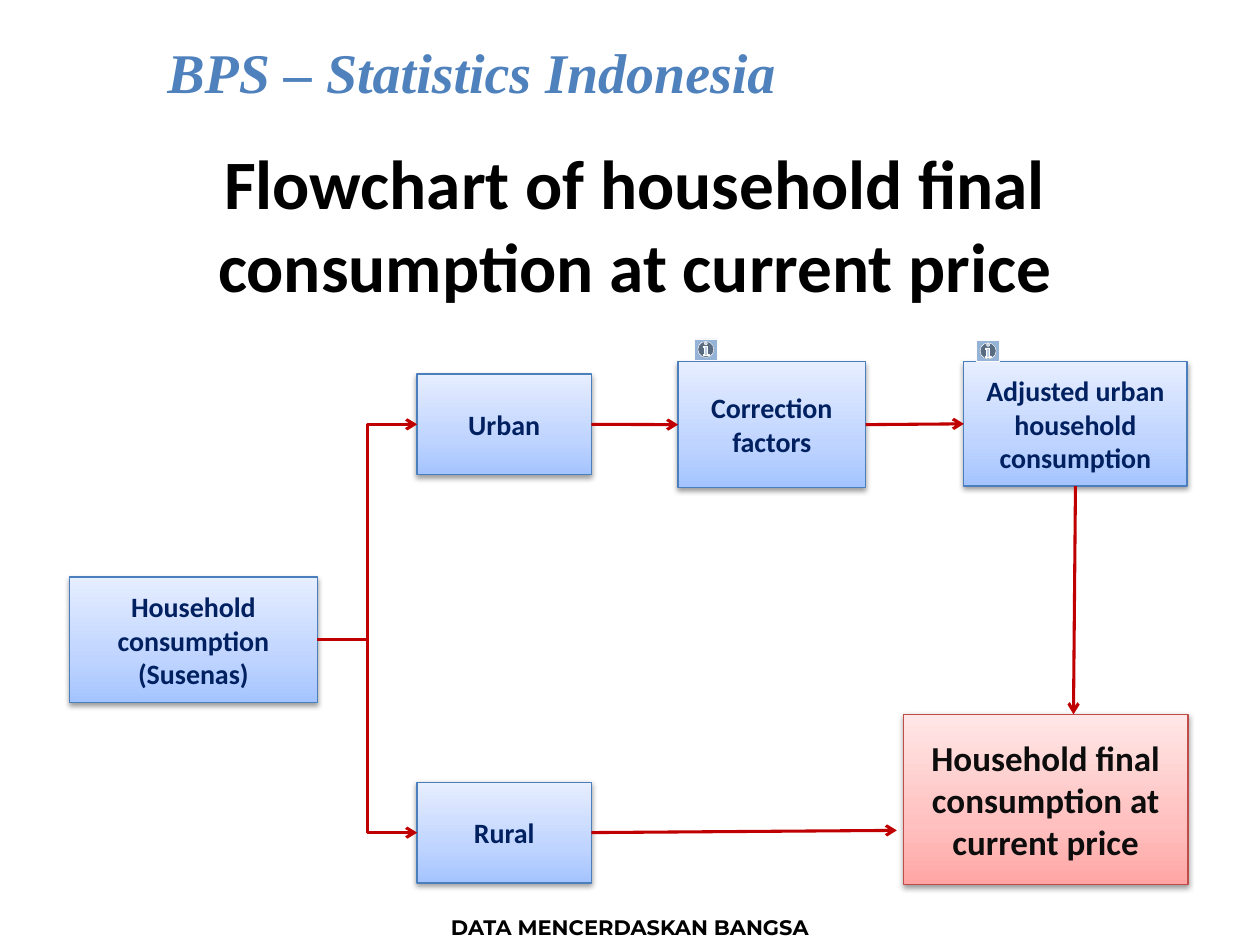
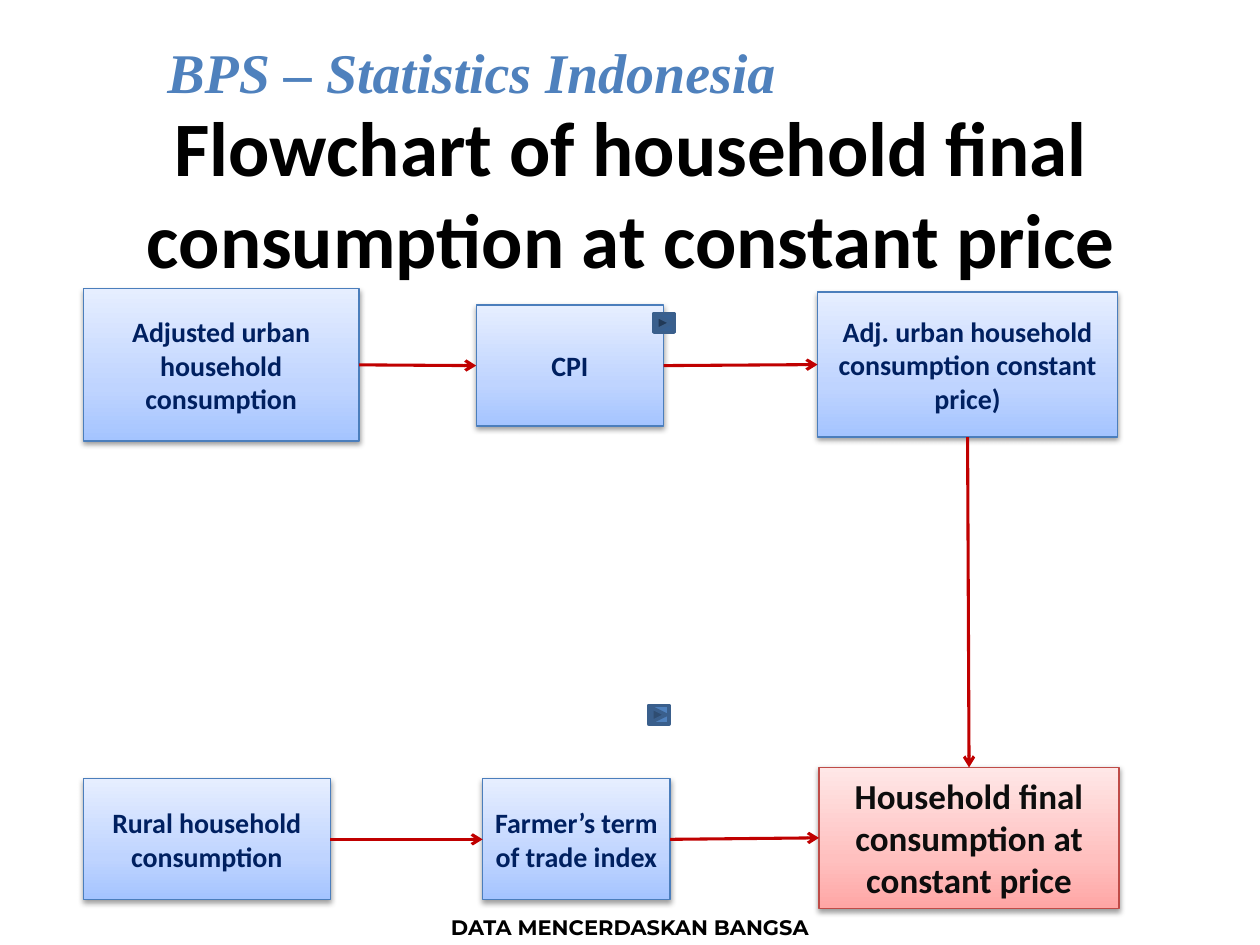
from copy import deepcopy

from lxml import etree
from pptx import Presentation
from pptx.dml.color import RGBColor
from pptx.enum import shapes, text
from pptx.oxml.ns import qn
from pptx.util import Cm, Pt

BLACK = RGBColor(0x00, 0x00, 0x00)
HEADER_BLUE = RGBColor(0x4F, 0x81, 0xBD)
NAVY = RGBColor(0x00, 0x20, 0x60)
NEAR_BLACK = RGBColor(0x0D, 0x0D, 0x0D)
ARROW_RED = RGBColor(0xC0, 0x00, 0x00)
STEP_EDGE = RGBColor(0x4B, 0x7E, 0xBC)
RESULT_EDGE = RGBColor(0xBF, 0x4C, 0x48)
INFO_FILL = RGBColor(0x95, 0xB3, 0xD7)
INFO_EDGE = RGBColor(0xFC, 0xFB, 0xF9)
NEXT_DARK = RGBColor(0x37, 0x60, 0x92)
NEXT_EDGE = RGBColor(0x3A, 0x5F, 0x8C)
STEP_STOPS = (RGBColor(0xA4, 0xC4, 0xFF), RGBColor(0xBF, 0xD4, 0xFF), RGBColor(0xE6, 0xEE, 0xFF))
RESULT_STOPS = (RGBColor(0xFF, 0xA6, 0xA5), RGBColor(0xFF, 0xC0, 0xBF), RGBColor(0xFF, 0xE7, 0xE7))
STOP_POSITIONS = (0, 0.35, 1)

BODY_FONT = "Calibri"
TOP, LEFT, BOTTOM, RIGHT = range(4)


def add_child(parent, tag, **attributes):
    return etree.SubElement(parent, qn(tag), attributes)


def write(frame, words, size, color, font=BODY_FONT, italic=None):
    """Fill a text frame with one centred bold run and return the run."""
    frame.word_wrap = True
    para = frame.paragraphs[0]
    para.alignment = text.PP_ALIGN.CENTER
    span = para.add_run()
    span.text = words
    span.font.name = font
    span.font.size = Pt(size)
    span.font.bold = True
    span.font.italic = italic
    span.font.color.rgb = color
    return span


def add_label(page, place, *style, **options):
    box = page.shapes.add_textbox(*map(Cm, place))
    return write(box.text_frame, *style, **options)


def outline_text(span, color, width):
    properties = span.font._element
    line = etree.Element(qn("a:ln"), w=str(Pt(width)))
    fill = add_child(line, "a:solidFill")
    add_child(fill, "a:srgbClr", val=str(color))
    properties.insert(0, line)


def add_page(deck, title, size, place):
    """Add a slide with the shared header and footer and its own title."""
    page = deck.slides.add_slide(deck.slide_layouts[5])
    footer = add_label(page, (0, 18.31, 25.4, 0.76), "DATA MENCERDASKAN BANGSA",
                       12, BLACK, font="Montserrat")
    outline_text(footer, BLACK, 0.75)
    add_label(page, (2.11, 0.64, 14.81, 1.63), "BPS – Statistics Indonesia",
              32, HEADER_BLUE, font="Times New Roman", italic=True)
    heading = page.shapes.title
    heading.left, heading.top, heading.width, heading.height = map(Cm, place)
    frame = heading.text_frame
    frame.auto_size = text.MSO_AUTO_SIZE.NONE
    frame.vertical_anchor = text.MSO_ANCHOR.MIDDLE
    write(frame, title, size, BLACK)
    return page


def fill_gradient(box, colors):
    """Blend three colours from the bottom edge to the top edge."""
    box.fill.gradient()
    box.fill.gradient_angle = 90
    stop_list = box._element.spPr.find(qn("a:gradFill")).find(qn("a:gsLst"))
    stop_list.append(deepcopy(stop_list[-1]))
    for stop, color, position in zip(box.fill.gradient_stops, colors, STOP_POSITIONS):
        stop.color.rgb = color
        stop.position = position


def add_soft_shadow(box):
    box.shadow.inherit = False
    effects = box._element.spPr.find(qn("a:effectLst"))
    shadow = add_child(effects, "a:outerShdw", blurRad="40000", dist="20000",
                       dir="5400000", rotWithShape="0")
    color = add_child(shadow, "a:srgbClr", val=str(BLACK))
    add_child(color, "a:alpha", val="38000")


def add_box(page, words, place, colors, edge, size, text_color):
    box = page.shapes.add_shape(shapes.MSO_SHAPE.RECTANGLE, *map(Cm, place))
    fill_gradient(box, colors)
    box.line.color.rgb = edge
    box.line.width = Pt(0.75)
    add_soft_shadow(box)
    box.text_frame.vertical_anchor = text.MSO_ANCHOR.MIDDLE
    write(box.text_frame, words, size, text_color)
    return box


def add_step(page, words, *place):
    return add_box(page, words, place, STEP_STOPS, STEP_EDGE, 16, NAVY)


def add_result(page, words, *place):
    return add_box(page, words, place, RESULT_STOPS, RESULT_EDGE, 20, NEAR_BLACK)


def add_arrow(page, start, target, leave=RIGHT, enter=LEFT,
              kind=shapes.MSO_CONNECTOR.STRAIGHT):
    """Draw an arrow from a box to a second box, or to an (x, y) point in cm."""
    to_point = isinstance(target, tuple)
    end = map(Cm, target) if to_point else (target.left, target.top)
    arrow = page.shapes.add_connector(kind, start.left, start.top, *end)
    arrow.begin_connect(start, leave)
    if not to_point:
        arrow.end_connect(target, enter)
    arrow.line.color.rgb = ARROW_RED
    arrow.line.width = Pt(1.75)
    properties = arrow._element.spPr
    add_child(properties.find(qn("a:ln")), "a:tailEnd", type="arrow")
    add_child(properties, "a:effectLst")


def add_button(page, kind, place, fill, edge, width):
    button = page.shapes.add_shape(kind, *map(Cm, place))
    button.shadow.inherit = False
    button.fill.solid()
    button.fill.fore_color.rgb = fill
    button.line.color.rgb = edge
    button.line.width = Pt(width)


def build_current_price(deck):
    page = add_page(deck, "Flowchart of household final consumption at current price",
                    39.6, (1.37, 2.92, 22.86, 3.15))
    source = add_step(page, "Household consumption (Susenas)", 1.4, 11.63, 5, 2.54)
    urban = add_step(page, "Urban", 8.41, 7.54, 3.51, 2.03)
    rural = add_step(page, "Rural", 8.41, 15.77, 3.51, 2.03)
    factors = add_step(page, "Correction factors", 13.67, 7.29, 3.78, 2.54)
    adjusted = add_step(page, "Adjusted urban household consumption",
                        19.43, 7.29, 4.5, 2.51)
    add_result(page, "Household final consumption at current price",
               18.21, 14.4, 5.74, 3.43)

    for area in (urban, rural):
        add_arrow(page, source, area, kind=shapes.MSO_CONNECTOR.ELBOW)
    add_arrow(page, urban, factors)
    add_arrow(page, factors, adjusted)
    add_arrow(page, rural, (18.08, 16.74))
    add_arrow(page, adjusted, (21.64, 14.4), leave=BOTTOM)

    for left, top in ((14, 6.83), (19.69, 6.86)):
        add_button(page, shapes.MSO_SHAPE.ACTION_BUTTON_INFORMATION,
                   (left, top, 0.46, 0.43), INFO_FILL, INFO_EDGE, 0.25)


def build_constant_price(deck):
    page = add_page(deck, "Flowchart of household final consumption at constant price",
                    44, (1.3, 2.06, 22.86, 3.61))
    adjusted = add_step(page, "Adjusted urban household consumption",
                        1.68, 5.82, 5.56, 3.07)
    rural = add_step(page, "Rural household consumption", 1.68, 15.7, 4.98, 2.44)
    price_index = add_step(page, "CPI", 9.6, 6.15, 3.78, 2.44)
    trade_index = add_step(page, "Farmer’s term of trade index", 9.73, 15.7, 3.78, 2.44)
    urban = add_step(page, "Adj. urban household consumption constant price)",
                     16.48, 5.89, 6.05, 2.92)
    final = add_result(page, "Household final consumption at constant price",
                       16.51, 15.47, 6.05, 2.84)

    for start, target in ((adjusted, price_index), (price_index, urban),
                          (rural, trade_index), (trade_index, final)):
        add_arrow(page, start, target)
    add_arrow(page, urban, final, leave=BOTTOM, enter=TOP)

    for left, top, fill in ((13.08, 14.22, HEADER_BLUE), (13.18, 6.32, NEXT_DARK)):
        add_button(page, shapes.MSO_SHAPE.ACTION_BUTTON_FORWARD_OR_NEXT,
                   (left, top, 0.41, 0.38), fill, NEXT_EDGE, 2)


def main():
    deck = Presentation()
    deck.slide_width, deck.slide_height = Cm(25.4), Cm(19.05)
    build_current_price(deck)
    build_constant_price(deck)
    deck.save("out.pptx")


if __name__ == "__main__":
    main()
